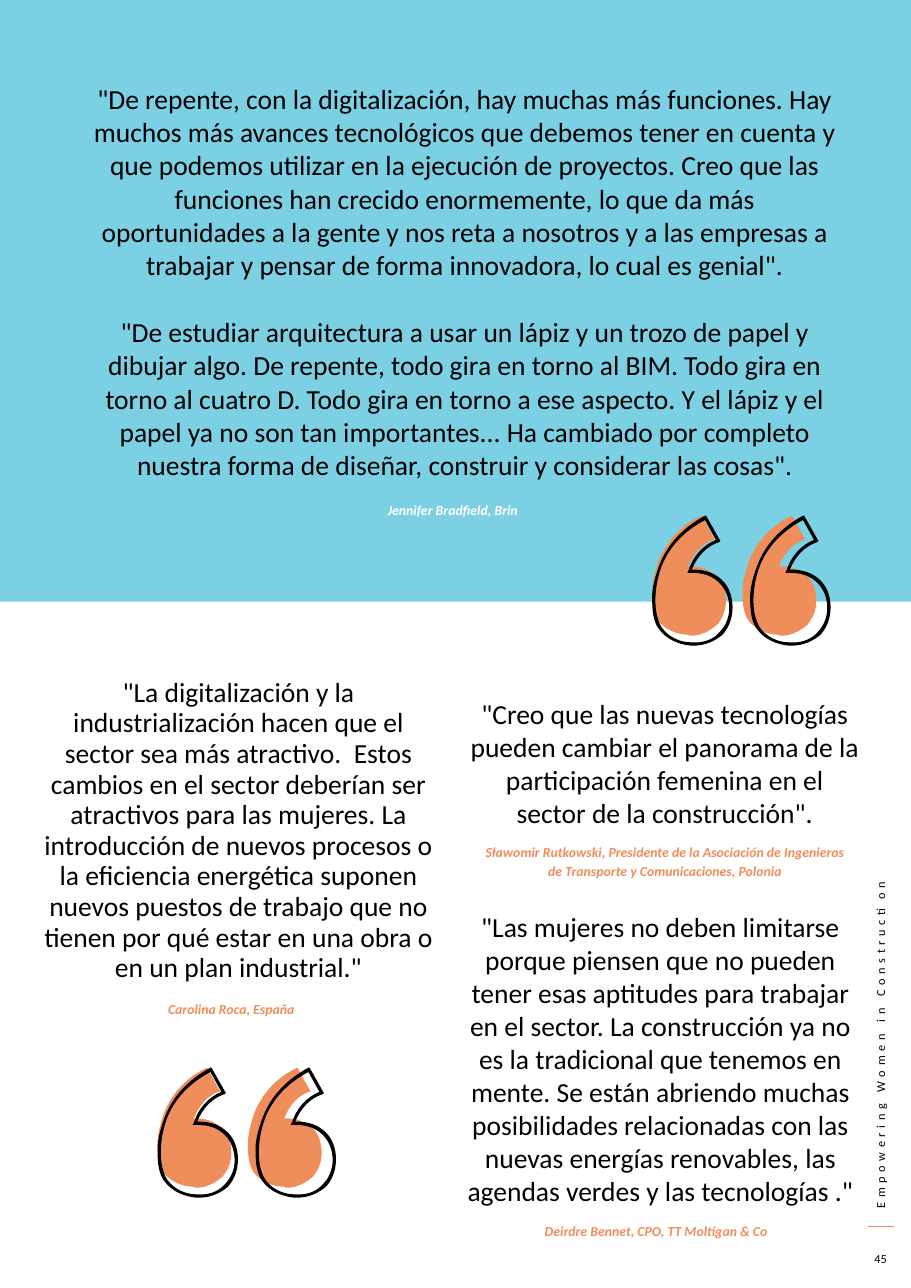
from dataclasses import dataclass

from lxml.etree import SubElement
from pptx import Presentation
from pptx.dml.color import RGBColor
from pptx.enum.shapes import MSO_CONNECTOR, MSO_SHAPE
from pptx.enum.text import MSO_ANCHOR, PP_ALIGN
from pptx.oxml.ns import qn
from pptx.shapes.autoshape import Shape
from pptx.slide import Slide
from pptx.util import Inches, Pt

SKY = RGBColor(0x7C, 0xD0, 0xE4)
ORANGE = RGBColor(0xEF, 0x8D, 0x5B)
BLACK = RGBColor(0x00, 0x00, 0x00)
INK = RGBColor(0x01, 0x01, 0x01)
WHITE = RGBColor(0xFF, 0xFF, 0xFF)
FONT = "Calibri"

# The first item of a contour is its start; two numbers make a line, six a Bézier curve
Contour = list[tuple[float, ...]]


@dataclass(frozen=True)
class TextBlock:
    box: tuple[float, float, float, float]
    paragraphs: tuple[str, ...]
    size: float = 18
    color: RGBColor = BLACK
    emphasis: bool = False
    anchor: MSO_ANCHOR = MSO_ANCHOR.TOP
    align: PP_ALIGN = PP_ALIGN.CENTER
    line_spacing: float | Pt | None = None
    right_inset: float = 0.1


@dataclass(frozen=True)
class QuoteMark:
    contours: tuple[Contour, ...]
    pitch: float
    color: RGBColor


FILLED_MARK = QuoteMark(([
    (0.35, 1.09), (0.34, 1.09, 0.33, 1.09, 0.32, 1.08),
    (0.22, 1.08, 0.12, 1.03, 0.06, 0.96), (0.01, 0.89, 0, 0.8, 0, 0.69),
    (0, 0.6, 0.03, 0.5, 0.06, 0.41), (0.13, 0.24, 0.25, 0.1, 0.43, 0.01),
    (0.45, 0), (0.57, 0.22), (0.55, 0.22),
    (0.45, 0.26, 0.38, 0.34, 0.33, 0.46), (0.34, 0.46),
    (0.44, 0.46, 0.52, 0.49, 0.59, 0.55), (0.64, 0.6, 0.67, 0.68, 0.67, 0.77),
    (0.67, 0.86, 0.64, 0.93, 0.59, 0.99), (0.52, 1.05, 0.44, 1.09, 0.35, 1.09),
],), 0.82, ORANGE)

OUTLINED_MARK = QuoteMark(([
    (0.38, 1.18), (0.37, 1.18, 0.36, 1.18, 0.35, 1.18),
    (0.24, 1.17, 0.13, 1.12, 0.07, 1.04), (0.01, 0.97, 0, 0.87, 0, 0.74),
    (0, 0.65, 0.03, 0.54, 0.07, 0.44), (0.14, 0.26, 0.28, 0.11, 0.48, 0),
    (0.49, 0), (0.62, 0.23), (0.61, 0.24),
    (0.49, 0.28, 0.41, 0.37, 0.36, 0.49), (0.37, 0.49),
    (0.48, 0.49, 0.57, 0.52, 0.64, 0.59), (0.7, 0.65, 0.73, 0.74, 0.73, 0.83),
    (0.73, 0.93, 0.7, 1.01, 0.64, 1.08), (0.57, 1.14, 0.48, 1.18, 0.38, 1.18),
], [
    (0.09, 1.02), (0.15, 1.1, 0.25, 1.15, 0.35, 1.15),
    (0.45, 1.16, 0.55, 1.13, 0.61, 1.06), (0.67, 1, 0.7, 0.92, 0.7, 0.84),
    (0.7, 0.75, 0.67, 0.67, 0.61, 0.61), (0.55, 0.55, 0.47, 0.52, 0.36, 0.52),
    (0.32, 0.52), (0.33, 0.5), (0.37, 0.37, 0.46, 0.27, 0.58, 0.22),
    (0.48, 0.04), (0.29, 0.14, 0.16, 0.28, 0.09, 0.45),
    (0.02, 0.63, 0, 0.88, 0.09, 1.02),
]), 0.89, INK)


def credit(left: float, top: float, text: str, color: RGBColor = ORANGE,
           line_spacing: float | None = 1.15, right_inset: float = 0.1) -> TextBlock:
    return TextBlock((left, top, 3.57, 0.43), (text,), 9, color, True,
                     line_spacing=line_spacing, right_inset=right_inset)


RUNNING_TITLE = TextBlock((6.26, 9.21, 3.47, 0.24), ("Empowering Women in Construction",), 8,
                          align=PP_ALIGN.LEFT)
PAGE_NUMBER = TextBlock((7.8, 11.28, 0.39, 0.29), ("45",), 8, anchor=MSO_ANCHOR.MIDDLE)
OPENING_QUOTE = TextBlock((0.72, 1.29, 7, 2.53), (
    '"De repente, con la digitalización, hay muchas más funciones. Hay muchos más avances '
    "tecnológicos que debemos tener en cuenta y que podemos utilizar en la ejecución de "
    "proyectos. Creo que las funciones han crecido enormemente, lo que da más oportunidades "
    "a la gente y nos reta a nosotros y a las empresas a trabajar y pensar de forma "
    'innovadora, lo cual es genial".',
    '"De estudiar arquitectura a usar un lápiz y un trozo de papel y dibujar algo. De '
    "repente, todo gira en torno al BIM. Todo gira en torno al cuatro D. Todo gira en torno "
    "a ese aspecto. Y el lápiz y el papel ya no son tan importantes... Ha cambiado por "
    'completo nuestra forma de diseñar, construir y considerar las cosas".',
), anchor=MSO_ANCHOR.MIDDLE)
MIDDLE_BLOCKS = (
    credit(2.46, 4.48, "Jennifer Bradfield, Brin", WHITE, right_inset=0.37),
    TextBlock((4.16, 6.28, 3.75, 1.3), (
        '"Creo que las nuevas tecnologías pueden cambiar el panorama de la participación '
        'femenina en el sector de la construcción".',
    )),
    credit(4.25, 7.59, "Sławomir Rutkowski, Presidente de la Asociación de Ingenieros "
                       "de Transporte y Comunicaciones, Polonia"),
    TextBlock((0.29, 6.67, 3.75, 1.73), (
        '"La digitalización y la industrialización hacen que el sector sea más atractivo.  Estos '
        "cambios en el sector deberían ser atractivos para las mujeres. La introducción de "
        "nuevos procesos o la eficiencia energética suponen nuevos puestos de trabajo que no "
        'tienen por qué estar en una obra o en un plan industrial."',
    ), anchor=MSO_ANCHOR.MIDDLE, line_spacing=Pt(20)),
    credit(0.45, 9.01, "Carolina Roca, España", right_inset=0.37),
)
CLOSING_BLOCKS = (
    TextBlock((4.12, 8.21, 3.75, 1.3), (
        '"Las mujeres no deben limitarse porque piensen que no pueden tener esas aptitudes para '
        "trabajar en el sector. La construcción ya no es la tradicional que tenemos en mente. Se "
        "están abriendo muchas posibilidades relacionadas con las nuevas energías renovables, "
        'las agendas verdes y las tecnologías ."',
    )),
    credit(4.17, 11.05, "Deirdre Bennet, CPO, TT Moltigan & Co", line_spacing=None),
)


def add_text(slide: Slide, block: TextBlock) -> Shape:
    box = slide.shapes.add_textbox(*map(Inches, block.box))
    frame = box.text_frame
    frame.word_wrap = True
    frame.vertical_anchor = block.anchor
    frame.margin_right = Inches(block.right_inset)
    frame.text = "\n".join(block.paragraphs)
    for index, paragraph in enumerate(frame.paragraphs):
        paragraph.alignment = block.align
        paragraph.space_before = Pt(22.7 if index else 0)
        if block.line_spacing:
            paragraph.line_spacing = block.line_spacing
        for run in paragraph.runs:
            run.font.name = FONT
            run.font.size = Pt(block.size)
            run.font.color.rgb = block.color
            run.font.bold = run.font.italic = block.emphasis
    return box


def paint(shape: Shape, color: RGBColor) -> None:
    shape.shadow.inherit = False
    shape.fill.solid()
    shape.fill.fore_color.rgb = color
    shape.line.fill.background()


def add_mark_pair(slide: Slide, mark: QuoteMark, left: float, top: float) -> Shape:
    builder = slide.shapes.build_freeform(Inches(left), Inches(top), scale=1.0)
    segments: list[tuple[float, ...]] = []
    for shift in (0, mark.pitch):
        for contour in mark.contours:
            start, *rest = [(Inches(left + shift + x), Inches(top + y))
                            for segment in contour
                            for x, y in zip(segment[::2], segment[1::2])]
            builder.move_to(*start)
            builder.add_line_segments(rest, close=True)
            segments += contour[1:]
    pair = builder.convert_to_shape()

    # Turn each run of three points that belongs to a curve into one Bézier segment
    lines = pair._element.iter(qn("a:lnTo"))
    points = iter(list(lines))
    for segment in segments:
        first = next(points)
        if len(segment) == 6:
            first.tag = qn("a:cubicBezTo")
            for _ in range(2):
                follower = next(points)
                first.append(follower[0])
                follower.getparent().remove(follower)
    paint(pair, mark.color)
    return pair


def add_quote_marks(slide: Slide, left: float, top: float) -> None:
    slide.shapes.add_group_shape([add_mark_pair(slide, mark, left, top)
                                  for mark in (FILLED_MARK, OUTLINED_MARK)])


def main() -> None:
    deck = Presentation()
    deck.slide_width, deck.slide_height = Inches(8.27), Inches(11.69)
    slide = deck.slides.add_slide(deck.slide_layouts[6])

    # Side margin: running title and rule
    title = add_text(slide, RUNNING_TITLE)
    title.rotation = 270
    title.text_frame.paragraphs[0].runs[0].font._element.set("spc", "300")
    rule = slide.shapes.add_connector(MSO_CONNECTOR.STRAIGHT, Inches(8.12), Inches(11.13),
                                      Inches(7.88), Inches(11.13))
    rule.line.color.rgb = ORANGE
    rule.line.width = Pt(1)
    SubElement(rule._element.spPr, qn("a:effectLst"))

    # Blue upper area
    for top in (-0.05, 1.97):
        band = slide.shapes.add_shape(MSO_SHAPE.RECTANGLE, 0, Inches(top),
                                      Inches(8.27), Inches(3.49))
        paint(band, SKY)

    # Quotes, authors and quotation marks in reading order
    add_text(slide, OPENING_QUOTE)
    add_text(slide, PAGE_NUMBER)
    add_quote_marks(slide, 5.92, 4.68)
    for block in MIDDLE_BLOCKS:
        add_text(slide, block)
    add_quote_marks(slide, 1.43, 9.69)
    for block in CLOSING_BLOCKS:
        add_text(slide, block)

    deck.save("out.pptx")


if __name__ == "__main__":
    main()
